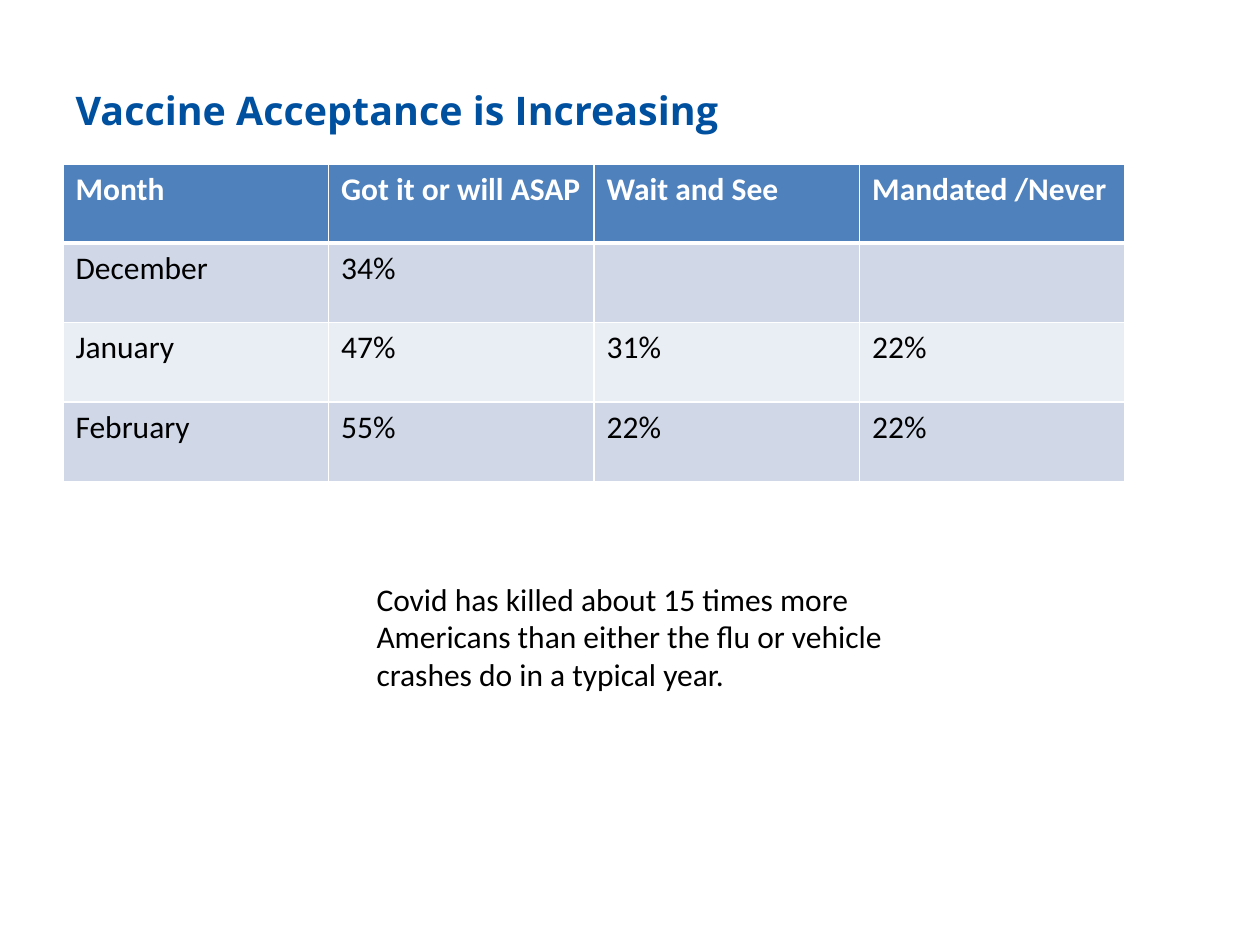
import pptx
import pptx.util
import pptx.dml.color
import pptx.enum.text
import pptx.oxml
import pptx.oxml.ns
from pptx.util import Inches

TITLE = "Vaccine Acceptance is Increasing"
ROWS = [
    ("Month", "Got it or will ASAP", "Wait and See", "Mandated /Never"),
    ("December", "34%", "", ""),
    ("January", "47%", "31%", "22%"),
    ("February", "55%", "22%", "22%"),
]
NOTE = ("Covid has killed about 15 times more Americans than either the flu "
        "or vehicle crashes do in a typical year.")
COLORS = {"title": "0050A0", "header": "4F81BD", "odd": "D0D8E8",
          "even": "E9EDF4", "white": "FFFFFF", "text": "000000"}
TABLE_WIDTH, ROW_HEIGHT = 8.43, 0.63


def rgb(name):
    return pptx.dml.color.RGBColor.from_string(COLORS[name])


def add_run(p, text, color, size=18, font="Calibri", bold=False):
    r = p.add_run()
    r.text = text
    r.font.size = pptx.util.Pt(size)
    r.font.name = font
    r.font.bold = bold
    r.font.color.rgb = rgb(color)


def set_borders(cell, bottom, top):
    """Draw white cell edges; bottom and top are widths in points."""
    tc_pr = cell._tc.get_or_add_tcPr()
    for side, width in (("L", 1), ("R", 1), ("T", top), ("B", bottom)):
        tc_pr.append(pptx.oxml.parse_xml(
            f'<a:ln{side} {pptx.oxml.ns.nsdecls("a")} w="{pptx.util.Pt(width)}">'
            f'<a:solidFill><a:srgbClr val="{COLORS["white"]}"/></a:solidFill>'
            f'</a:ln{side}>'))


def add_title(s):
    sp = s.shapes.title
    sp.left, sp.top = Inches(0.5), Inches(0.61)
    sp.width, sp.height = Inches(9), Inches(0.53)
    tf = sp.text_frame
    tf.vertical_anchor = pptx.enum.text.MSO_ANCHOR.MIDDLE
    tf.auto_size = pptx.enum.text.MSO_AUTO_SIZE.NONE
    p = tf.paragraphs[0]
    p.alignment = pptx.enum.text.PP_ALIGN.LEFT
    add_run(p, TITLE, "title", 22.5, "Open Sans", True)


def add_acceptance_table(s):
    table = s.shapes.add_table(
        len(ROWS), len(ROWS[0]), Inches(0.5), Inches(1.3),
        Inches(TABLE_WIDTH), Inches(ROW_HEIGHT * len(ROWS))).table
    for i, row in enumerate(ROWS):
        header = i == 0
        fill = "header" if header else "odd" if i % 2 else "even"
        for j, text in enumerate(row):
            cell = table.cell(i, j)
            set_borders(cell, 3 if header else 1, 3 if i == 1 else 1)
            cell.fill.solid()
            cell.fill.fore_color.rgb = rgb(fill)
            if text:
                add_run(cell.text_frame.paragraphs[0], text,
                        "white" if header else "text", bold=header)


def add_note(s):
    sp = s.shapes.add_textbox(Inches(2.89), Inches(4.55), Inches(5), Inches(1.01))
    tf = sp.text_frame
    tf.word_wrap = True
    tf.auto_size = pptx.enum.text.MSO_AUTO_SIZE.SHAPE_TO_FIT_TEXT
    add_run(tf.paragraphs[0], NOTE, "text")


def main():
    prs = pptx.Presentation()
    prs.slide_width, prs.slide_height = Inches(10), Inches(7.5)
    s = prs.slides.add_slide(prs.slide_layouts.get_by_name("Title Only"))
    add_title(s)
    add_acceptance_table(s)
    add_note(s)
    prs.save("out.pptx")


if __name__ == "__main__":
    main()
